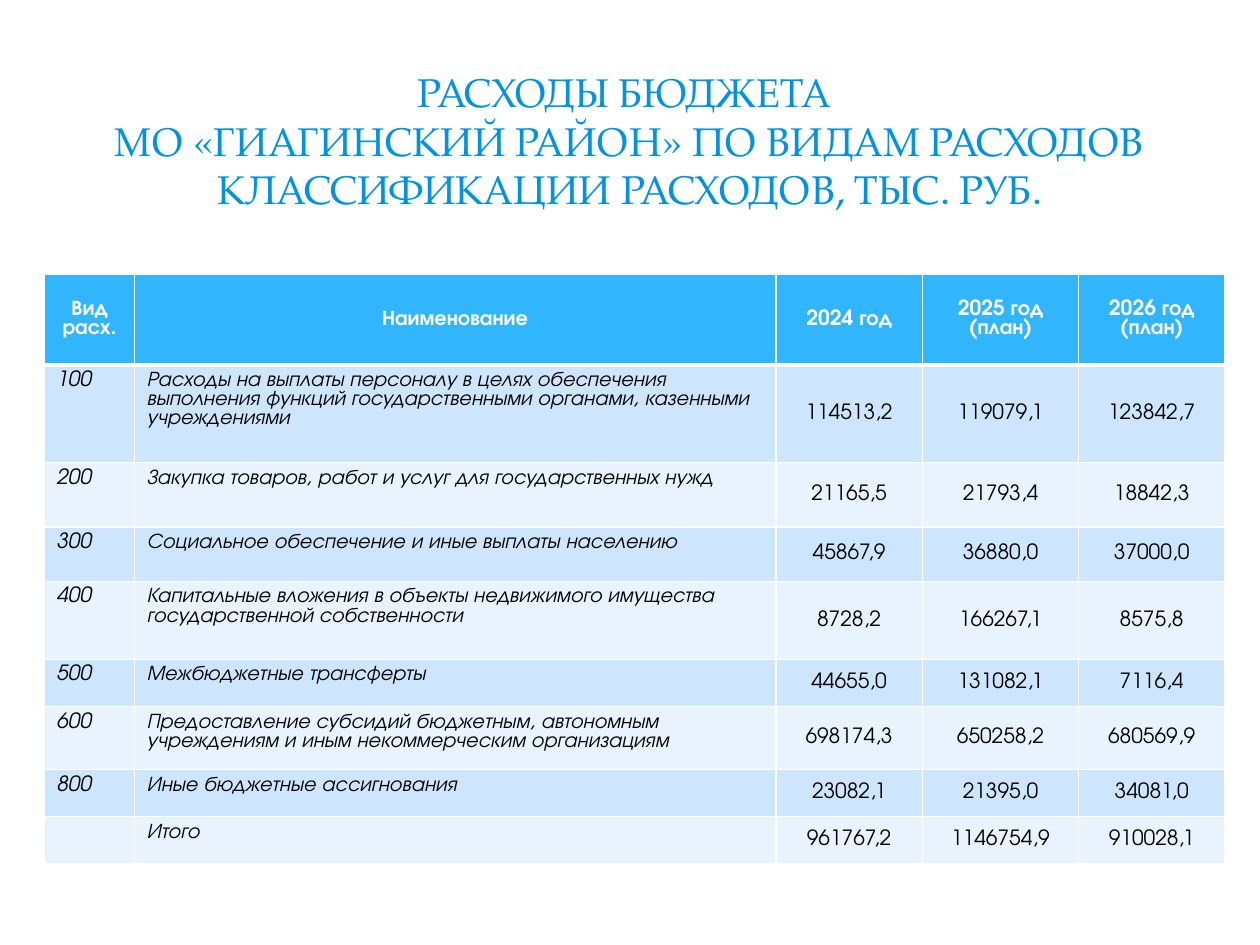
from lxml.etree import SubElement
from pptx import Presentation
from pptx.dml.color import RGBColor
from pptx.enum.shapes import MSO_SHAPE
from pptx.enum.text import MSO_ANCHOR, PP_ALIGN
from pptx.oxml.ns import qn
from pptx.util import Pt

COLORS = {
    "title": "0293E0",
    "header": "31B6FD",
    "odd": "CEE5FE",
    "even": "E8F3FF",
    "white": "FFFFFF",
    "black": "000000",
}
TITLE_FONT, TABLE_FONT = "TeX Gyre Pagella", "TeX Gyre Adventor"

PANELS = [
    (MSO_SHAPE.ROUNDED_RECTANGLE, 7.2, 7.9, 705.6, 524.9, 100),
    (MSO_SHAPE.RECTANGLE, 21.6, 21.6, 676.8, 104.4, 83),
    (MSO_SHAPE.RECTANGLE, 29.5, 29.5, 660.2, 87.8, 100),
]
TITLE = (
    "РАСХОДЫ БЮДЖЕТА \v"
    "МО «ГИАГИНСКИЙ РАЙОН» ПО ВИДАМ РАСХОДОВ\v"
    "КЛАССИФИКАЦИИ РАСХОДОВ, ТЫС. РУБ."
)
ROWS = [
    ("Вид расх.", "Наименование", "2024 год", "2025 год\n(план)", "2026 год (план)"),
    ("100", "Расходы на выплаты персоналу в целях обеспечения выполнения функций "
     "государственными органами, казенными учреждениями",
     "114513,2", "119079,1", "123842,7"),
    ("200", "Закупка товаров, работ и услуг для государственных нужд",
     "21165,5", "21793,4", "18842,3"),
    ("300", "Социальное обеспечение и иные выплаты населению",
     "45867,9", "36880,0", "37000,0"),
    ("400", "Капитальные вложения в объекты недвижимого имущества "
     "государственной собственности",
     "8728,2", "166267,1", "8575,8"),
    ("500", "Межбюджетные трансферты", "44655,0", "131082,1", "7116,4"),
    ("600", "Предоставление субсидий бюджетным, автономным учреждениям "
     "и иным некоммерческим организациям",
     "698174,3", "650258,2", "680569,9"),
    ("800", "Иные бюджетные ассигнования", "23082,1", "21395,0", "34081,0"),
    ("", "Итого", "961767,2", "1146754,9", "910028,1"),
]
COL_WIDTHS = [51.3, 366.6, 83.7, 89.4, 83.4]
ROW_HEIGHTS = [51.6, 55.8, 36.8, 31.2, 44.6, 26.9, 36.1, 26.9, 26.9]


def write_text(tf, text, size=12, font=TABLE_FONT, color="black", bold=False,
               italic=False, align=PP_ALIGN.LEFT, spacing=None):
    tf.text = text
    for p in tf.paragraphs:
        p.alignment = align
        if spacing:
            p.line_spacing = Pt(spacing)
        p.font.size = Pt(size)
        for r in p.runs:
            r.font.name = font
            r.font.size = Pt(size)
            r.font.bold = bold
            r.font.italic = italic
            r.font.color.rgb = RGBColor.from_string(COLORS[color])


def add_solid_fill(parent, color):
    fill = SubElement(parent, qn("a:solidFill"))
    return SubElement(fill, qn("a:srgbClr"), val=COLORS[color])


def add_panels(slide):
    for kind, left, top, width, height, opacity in PANELS:
        sp = slide.shapes.add_shape(kind, Pt(left), Pt(top), Pt(width), Pt(height))
        sp.shadow.inherit = False
        sp.line.fill.background()
        sp.fill.solid()
        sp.fill.fore_color.rgb = RGBColor.from_string(COLORS["white"])
        if kind == MSO_SHAPE.ROUNDED_RECTANGLE:
            sp.adjustments[0] = 0.02
        if opacity < 100:
            clr = sp.fill._xPr.find(qn("a:solidFill")).find(qn("a:srgbClr"))
            SubElement(clr, qn("a:alpha"), val=str(opacity * 1000))


def add_title(slide):
    tf = slide.shapes.add_textbox(Pt(31.2), Pt(54.5), Pt(657.4), Pt(51.1)).text_frame
    tf.word_wrap = True
    tf.vertical_anchor = MSO_ANCHOR.MIDDLE
    write_text(tf, TITLE, size=23, font=TITLE_FONT, color="title",
               align=PP_ALIGN.CENTER)


def set_borders(cell, **widths):
    tc_pr = cell._tc.get_or_add_tcPr()
    for i, (side, width) in enumerate(widths.items()):
        ln = SubElement(tc_pr, qn(f"a:ln{side}"), w=str(Pt(width)))
        add_solid_fill(ln, "white")
        tc_pr.insert(i, ln)


def add_budget_table(slide):
    table = slide.shapes.add_table(
        len(ROWS), len(COL_WIDTHS), Pt(25.5), Pt(156.9),
        Pt(sum(COL_WIDTHS)), Pt(sum(ROW_HEIGHTS))).table
    for column, width in zip(table.columns, COL_WIDTHS):
        column.width = Pt(width)
    for row, height in zip(table.rows, ROW_HEIGHTS):
        row.height = Pt(height)

    for i, values in enumerate(ROWS):
        is_header = i == 0
        fill = "header" if is_header else ("even", "odd")[i % 2]
        for j, value in enumerate(values):
            centred = is_header or j >= 2
            cell = table.cell(i, j)
            cell.fill.solid()
            cell.fill.fore_color.rgb = RGBColor.from_string(COLORS[fill])
            set_borders(cell, L=1, R=1, T=3 if i == 1 else 1, B=3 if is_header else 1)
            cell.margin_left = cell.margin_right = Pt(7)
            cell.margin_top = cell.margin_bottom = Pt(3.6)
            cell.vertical_anchor = MSO_ANCHOR.MIDDLE if centred else MSO_ANCHOR.TOP
            write_text(cell.text_frame, value,
                       color="white" if is_header else "black",
                       bold=is_header, italic=not centred, spacing=11,
                       align=PP_ALIGN.CENTER if centred else PP_ALIGN.LEFT)


def main():
    prs = Presentation()
    prs.slide_width, prs.slide_height = Pt(720), Pt(540)
    slide = prs.slides.add_slide(prs.slide_layouts[6])
    add_panels(slide)
    add_title(slide)
    add_budget_table(slide)
    prs.save("out.pptx")


if __name__ == "__main__":
    main()
